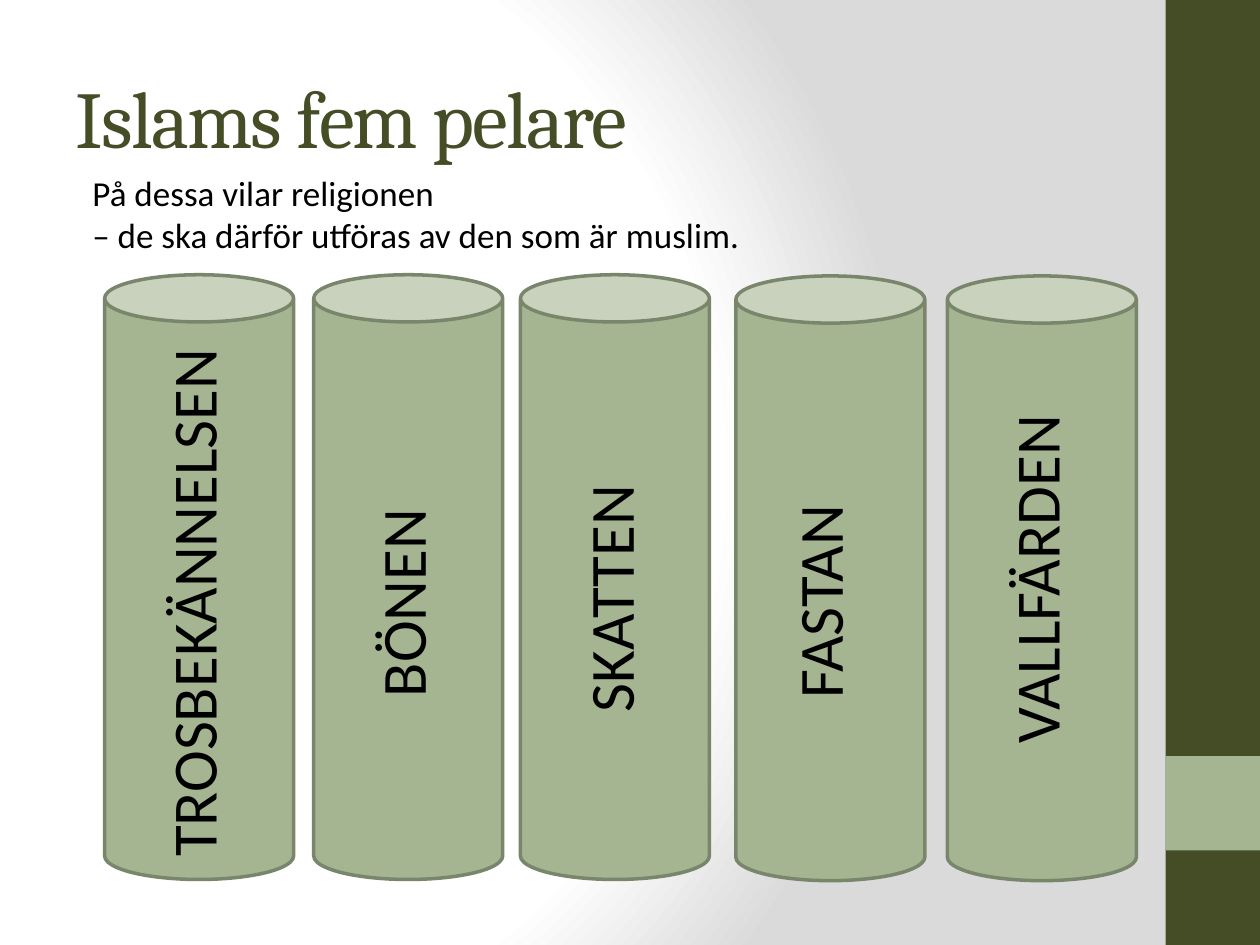
from dataclasses import dataclass

from pptx import Presentation
from pptx.dml.color import RGBColor
from pptx.enum.shapes import MSO_SHAPE
from pptx.enum.text import MSO_ANCHOR, MSO_AUTO_SIZE
from pptx.oxml import parse_xml
from pptx.oxml.ns import nsdecls
from pptx.util import Pt


@dataclass(frozen=True)
class Theme:
    dark: str = "444D26"
    sage: str = "A5B592"
    outline: str = "7A866C"
    black: str = "000000"
    white: str = "FFFFFF"
    shade: str = "DADADA"
    heading: str = "Cambria"
    body: str = "Calibri"
    title_size: int = 46
    body_size: int = 20
    label_size: int = 36


theme = Theme()
prs = Presentation()
prs.slide_width, prs.slide_height = Pt(720), Pt(540)
s = prs.slides.add_slide(prs.slide_layouts[6])


def add_block(kind, x, y, w, h, fill, line=None):
    sp = s.shapes.add_shape(kind, Pt(x), Pt(y), Pt(w), Pt(h))
    sp.shadow.inherit = False
    sp.fill.solid()
    sp.fill.fore_color.rgb = RGBColor.from_string(fill)
    if line:
        sp.line.color.rgb = RGBColor.from_string(line)
        sp.line.width = Pt(2)
    else:
        sp.line.fill.background()


def add_text(x, y, w, h, lines, font, size, color):
    """Add a wrapped text box with one paragraph; return its text frame."""
    tf = s.shapes.add_textbox(Pt(x), Pt(y), Pt(w), Pt(h)).text_frame
    tf.word_wrap = True
    p = tf.paragraphs[0]
    for i, line in enumerate(lines):
        if i:
            p.add_line_break()
        r = p.add_run()
        r.text = line
        r.font.name = font
        r.font.size = Pt(size)
        r.font.color.rgb = RGBColor.from_string(color)
    return tf


# Background: radial gradient, white to grey
stops = "".join(
    f'<a:gs pos="{pos * 1000}"><a:srgbClr val="{color}"/></a:gs>'
    for pos, color in ((0, theme.white), (75, theme.white), (100, theme.shade))
)
s.element.cSld.insert(0, parse_xml(
    f'<p:bg {nsdecls("p", "a")}><p:bgPr><a:gradFill rotWithShape="1">'
    f'<a:gsLst>{stops}</a:gsLst><a:path path="circle">'
    '<a:fillToRect l="20000" t="50000" r="100000" b="50000"/></a:path>'
    '</a:gradFill><a:effectLst/></p:bgPr></p:bg>'
))

# Side band
add_block(MSO_SHAPE.RECTANGLE, 666, 0, 54, 540, theme.dark)
add_block(MSO_SHAPE.RECTANGLE, 666, 432, 54, 54, theme.sage)

# Heading and introduction
tf = add_text(36, 21.6, 600, 90, ["Islams fem pelare"],
              theme.heading, theme.title_size, theme.dark)
tf.vertical_anchor = MSO_ANCHOR.MIDDLE
tf.paragraphs[0].runs[0].font._element.set("spc", "-100")

tf = add_text(36.7, 94.3, 600, 378,
              ["På dessa vilar religionen ",
               "– de ska därför utföras av den som är muslim."],
              theme.body, theme.body_size, theme.black)
tf.paragraphs[0]._p.get_or_add_pPr().set("marL", str(Pt(9)))

# Pillars: word, pillar left and top, label left, top and height
pillars = [
    ("TROSBEKÄNNELSEN", 59.8, 157, 84.2, 185, 311.8),
    ("BÖNEN", 179.3, 157, 203.8, 247, 158.4),
    ("SKATTEN", 297.4, 157, 322.6, 247, 167),
    ("FASTAN", 420.5, 157.7, 442.1, 275.8, 130.3),
    ("VALLFÄRDEN", 541.4, 157.7, 565.9, 226.8, 205.2),
]
for word, x, y, label_x, label_y, label_h in pillars:
    add_block(MSO_SHAPE.CAN, x, y, 108, 345.6, theme.sage, theme.outline)
    tf = add_text(label_x, label_y, 58.3, label_h, [word],
                  theme.body, theme.label_size, theme.black)
    tf.auto_size = MSO_AUTO_SIZE.SHAPE_TO_FIT_TEXT
    tf._txBody.bodyPr.set("vert", "vert270")

prs.save("out.pptx")
